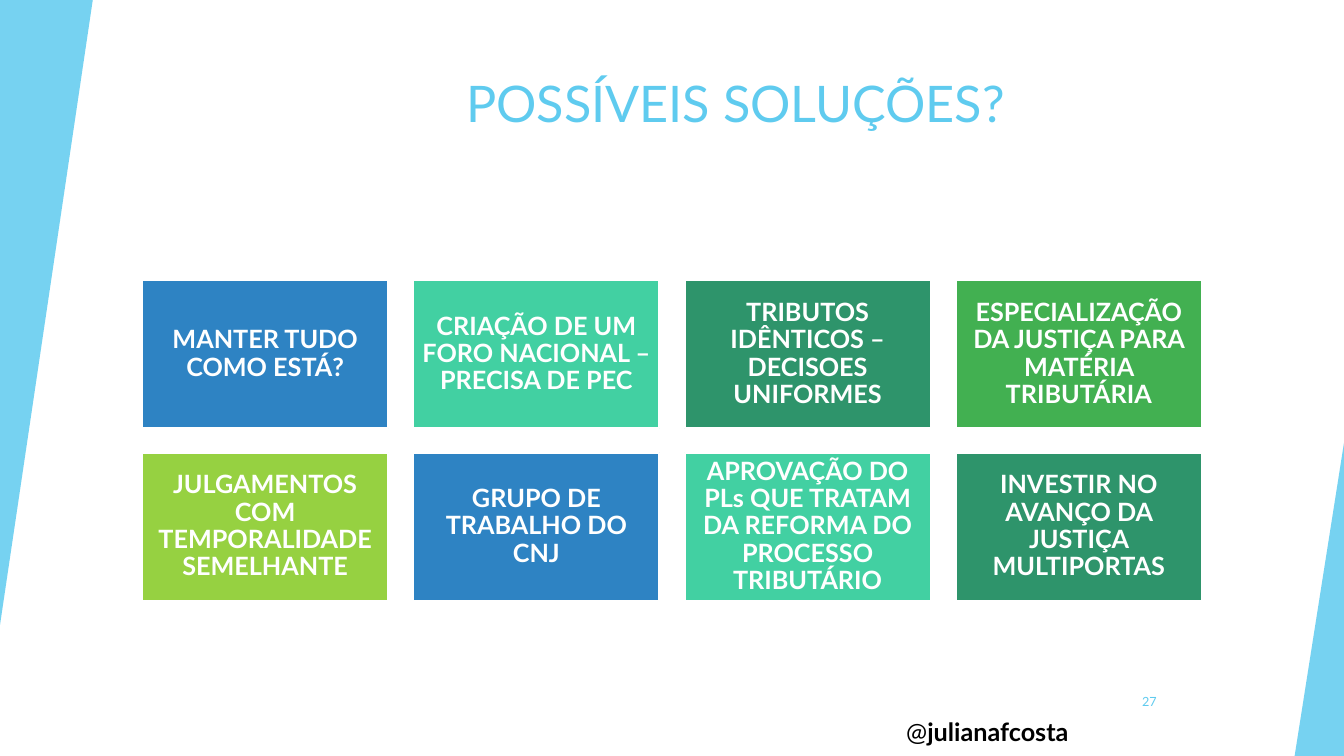
from lxml import etree
from pptx import Presentation
from pptx.dml.color import RGBColor
from pptx.enum.shapes import MSO_SHAPE as Shape
from pptx.enum.text import MSO_ANCHOR as Anchor, PP_ALIGN as Align
from pptx.oxml.ns import qn
from pptx.util import Inches, Pt

SKY = RGBColor(0x5F, 0xCB, 0xEF)
BLUE = RGBColor(0x2E, 0x83, 0xC3)
MINT = RGBColor(0x42, 0xD0, 0xA2)
PINE = RGBColor(0x2E, 0x94, 0x6B)
GREEN = RGBColor(0x42, 0xB0, 0x51)
LIME = RGBColor(0x96, 0xD1, 0x41)
WHITE = RGBColor(0xFF, 0xFF, 0xFF)
BLACK = RGBColor(0, 0, 0)


def add_span(para, text, size, color, bold=False):
    span = para.add_run()
    span.text = text
    span.font.name = "Lato"
    span.font.size = Pt(size)
    span.font.bold = bold
    span.font.color.rgb = color


def add_label(left, top, width, height, align, anchor=Anchor.TOP):
    box = page.shapes.add_textbox(Inches(left), Inches(top), Inches(width), Inches(height))
    box.text_frame.word_wrap = True
    box.text_frame.vertical_anchor = anchor
    para = box.text_frame.paragraphs[0]
    para.alignment = align
    return para


deck = Presentation()
deck.slide_width = Inches(13.33)
deck.slide_height = Inches(7.5)
page = deck.slides.add_slide(deck.slide_layouts[6])

# Translucent side wedges
for left, top, width, height, turn in [(0, 0, 0.92, 6.2, 180), (12.84, 4.39, 0.49, 3.11, 0)]:
    wedge = page.shapes.add_shape(
        Shape.ISOSCELES_TRIANGLE, Inches(left), Inches(top), Inches(width), Inches(height))
    wedge.adjustments[0] = 1
    wedge.rotation = turn
    wedge.shadow.inherit = False
    wedge.line.fill.background()
    wedge.fill.solid()
    wedge.fill.fore_color.rgb = SKY
    color_node = wedge.fill._xPr.find(qn("a:solidFill"))[0]
    etree.SubElement(color_node, qn("a:alpha"), val="85000")

# Title
title = add_label(1.72, 0.67, 11.15, 1.2, Align.CENTER)
add_span(title, "POSSÍVEIS SOLUÇÕES?", 36, SKY)

# Solution cards, four to a row
solutions = [
    ("MANTER TUDO COMO ESTÁ?", BLUE),
    ("CRIAÇÃO DE UM FORO NACIONAL – PRECISA DE PEC", MINT),
    ("TRIBUTOS IDÊNTICOS – DECISOES UNIFORMES", PINE),
    ("ESPECIALIZAÇÃO DA JUSTIÇA PARA MATÉRIA TRIBUTÁRIA", GREEN),
    ("JULGAMENTOS COM TEMPORALIDADE SEMELHANTE", LIME),
    ("GRUPO DE TRABALHO DO CNJ", BLUE),
    ("APROVAÇÃO DO PLs QUE TRATAM DA REFORMA DO PROCESSO TRIBUTÁRIO", MINT),
    ("INVESTIR NO AVANÇO DA JUSTIÇA MULTIPORTAS", PINE),
]
for index, (text, color) in enumerate(solutions):
    row, column = divmod(index, 4)
    card = page.shapes.add_shape(
        Shape.RECTANGLE, Inches(1.41 + 2.69 * column), Inches(2.78 + 1.71 * row),
        Inches(2.44), Inches(1.47))
    card.shadow.inherit = False
    card.fill.solid()
    card.fill.fore_color.rgb = color
    card.line.color.rgb = WHITE
    card.line.width = Pt(1.5)
    frame = card.text_frame
    frame.word_wrap = True
    frame.vertical_anchor = Anchor.MIDDLE
    frame.margin_left = frame.margin_right = Inches(0.07)
    frame.margin_top = frame.margin_bottom = Inches(0.07)
    para = frame.paragraphs[0]
    para.alignment = Align.CENTER
    para.line_spacing = 0.9
    add_span(para, text, 18, WHITE, bold=True)

# Page number and handle
number = add_label(10.82, 6.76, 0.75, 0.4, Align.RIGHT, Anchor.MIDDLE)
add_span(number, "27", 9, SKY)
handle = add_label(8.89, 7.06, 4.4, 0.4, Align.LEFT)
add_span(handle, "@", 18, BLACK)
add_span(handle, "julianafcosta", 18, BLACK, bold=True)

deck.save("out.pptx")
